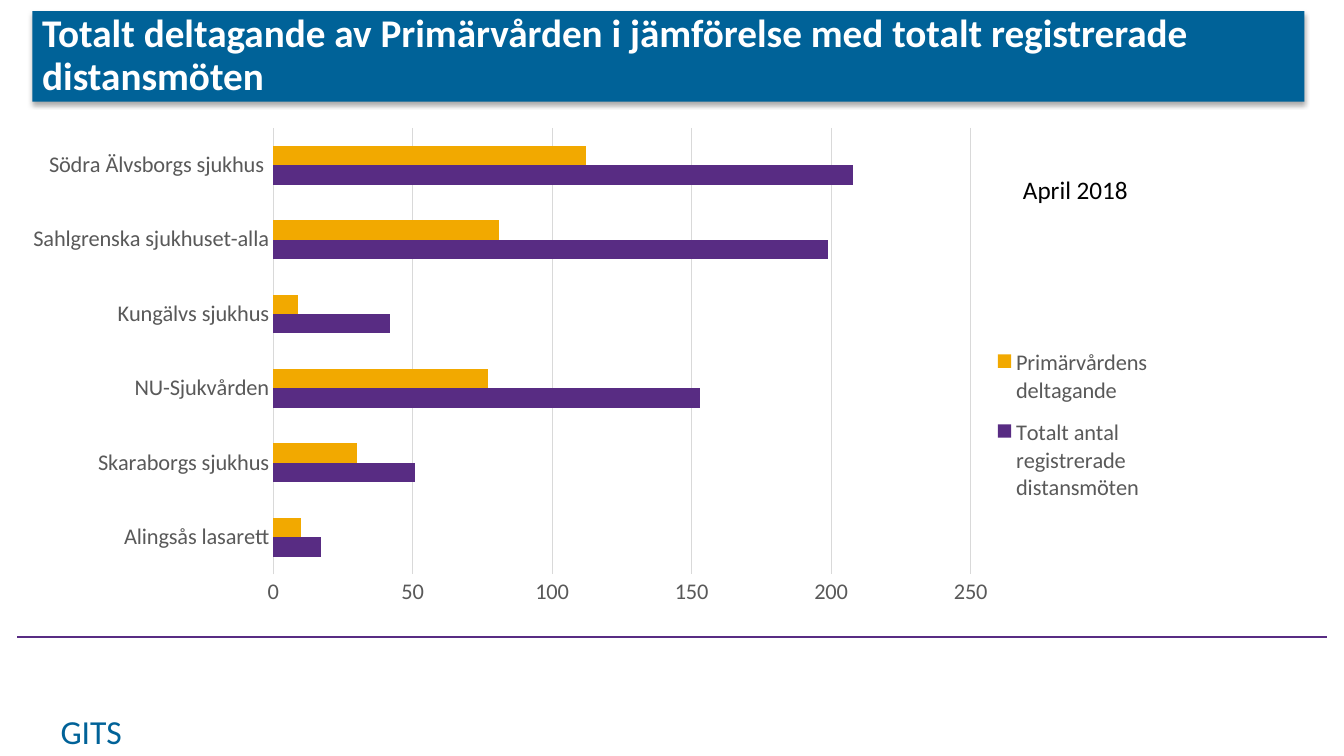
"""Build the slide comparing primary care participation with all registered remote meetings."""

from dataclasses import dataclass

import lxml.etree
import pptx
import pptx.chart.axis
import pptx.chart.chart
import pptx.chart.data
import pptx.dml.color
import pptx.enum.chart
import pptx.enum.shapes
import pptx.enum.text
import pptx.oxml
import pptx.oxml.ns
import pptx.slide
import pptx.text.text
import pptx.util

Inches = pptx.util.Inches
qn = pptx.oxml.ns.qn


@dataclass(frozen=True)
class Theme:
    font: str = "Calibri"
    blue: str = "006298"
    purple: str = "582C83"
    yellow: str = "F2A900"
    white: str = "FFFFFF"
    black: str = "000000"
    gray: str = "595959"
    grid: str = "D9D9D9"
    title_size: int = 28
    footer_size: int = 24
    note_size: int = 18
    chart_size: int = 16


@dataclass(frozen=True)
class Box:
    left: float
    top: float
    width: float
    height: float

    def lengths(self) -> tuple[int, int, int, int]:
        return (Inches(self.left), Inches(self.top), Inches(self.width), Inches(self.height))


@dataclass(frozen=True)
class Label:
    text: str
    box: Box
    size: int
    color: str
    alignment: pptx.enum.text.PP_ALIGN
    wrap: bool


@dataclass(frozen=True)
class Series:
    name: str
    values: tuple[int, ...]
    color: str


THEME = Theme()
TITLE = "Totalt deltagande av Primärvården i jämförelse med totalt registrerade distansmöten"
CHART_BOX = Box(0.22, 1.12, 11.57, 4.98)
PLOT_BOX = Box(2.49, 0.15, 6.92, 4.43)
LEGEND_BOX = Box(9.55, 2.2, 1.74, 1.81)
LABELS = (
    Label("GITS", Box(0.47, 7, 0.87, 0.5), THEME.footer_size, THEME.blue,
          pptx.enum.text.PP_ALIGN.CENTER, True),
    Label("April 2018", Box(10.05, 1.68, 1.25, 0.4), THEME.note_size, THEME.black,
          pptx.enum.text.PP_ALIGN.LEFT, False),
)
HOSPITALS = (
    "Alingsås lasarett",
    "Skaraborgs sjukhus",
    "NU-Sjukvården",
    "Kungälvs sjukhus",
    "Sahlgrenska sjukhuset-alla",
    "Södra Älvsborgs sjukhus ",
)
MEETINGS = (
    Series("Totalt antal registrerade distansmöten", (17, 51, 153, 42, 199, 208), THEME.purple),
    Series("Primärvårdens deltagande", (10, 30, 77, 9, 81, 112), THEME.yellow),
)


def rgb(color: str) -> pptx.dml.color.RGBColor:
    return pptx.dml.color.RGBColor.from_string(color)


def set_font(font: pptx.text.text.Font, size: int, color: str, bold: bool = False) -> None:
    font.name = THEME.font
    font.size = pptx.util.Pt(size)
    font.bold = bold
    font.color.rgb = rgb(color)


def add_title(slide: pptx.slide.Slide) -> None:
    shape = slide.shapes.add_shape(
        pptx.enum.shapes.MSO_SHAPE.RECTANGLE, *Box(0.32, 0.11, 12.62, 0.9).lengths())
    shape.fill.solid()
    shape.fill.fore_color.rgb = rgb(THEME.blue)
    shape.line.fill.background()
    shape.shadow.inherit = False
    effects = shape.element.spPr.find(qn("a:effectLst"))
    shadow = lxml.etree.SubElement(
        effects, qn("a:outerShdw"), blurRad=str(pptx.util.Pt(3.5)), dist=str(pptx.util.Pt(2.2)),
        dir="5400000", algn="t", rotWithShape="0")
    color = lxml.etree.SubElement(shadow, qn("a:srgbClr"), val=THEME.black)
    lxml.etree.SubElement(color, qn("a:alpha"), val="32000")
    frame = shape.text_frame
    frame.word_wrap = True
    frame.vertical_anchor = pptx.enum.text.MSO_ANCHOR.MIDDLE
    paragraph = frame.paragraphs[0]
    paragraph.text = TITLE
    paragraph.alignment = pptx.enum.text.PP_ALIGN.LEFT
    paragraph.line_spacing = 0.9
    set_font(paragraph.font, THEME.title_size, THEME.white, bold=True)


def add_label(slide: pptx.slide.Slide, label: Label) -> None:
    frame = slide.shapes.add_textbox(*label.box.lengths()).text_frame
    frame.word_wrap = label.wrap
    frame.auto_size = pptx.enum.text.MSO_AUTO_SIZE.SHAPE_TO_FIT_TEXT
    paragraph = frame.paragraphs[0]
    paragraph.text = label.text
    paragraph.alignment = label.alignment
    set_font(paragraph.font, label.size, label.color)


def add_footer_line(slide: pptx.slide.Slide) -> None:
    line = slide.shapes.add_connector(
        pptx.enum.shapes.MSO_CONNECTOR.STRAIGHT,
        Inches(0.17), Inches(6.32), Inches(13.17), Inches(6.32))
    line.line.color.rgb = rgb(THEME.purple)
    line.line.width = pptx.util.Pt(1)
    lxml.etree.SubElement(line.element.spPr, qn("a:effectLst"))


def set_layout(parent: lxml.etree.ElementBase, index: int, box: Box, inner: bool) -> None:
    for existing in parent.findall(qn("c:layout")):
        parent.remove(existing)
    layout = pptx.oxml.parse_xml(f"<c:layout {pptx.oxml.ns.nsdecls('c')}/>")
    manual = lxml.etree.SubElement(layout, qn("c:manualLayout"))
    settings = {"layoutTarget": "inner"} if inner else {}
    settings |= {"xMode": "edge", "yMode": "edge",
                 "x": box.left / CHART_BOX.width, "y": box.top / CHART_BOX.height,
                 "w": box.width / CHART_BOX.width, "h": box.height / CHART_BOX.height}
    for name, value in settings.items():
        lxml.etree.SubElement(manual, qn(f"c:{name}"), val=str(value))
    parent.insert(index, layout)


def style_axis(axis: pptx.chart.axis._BaseAxis) -> None:
    axis.major_tick_mark = pptx.enum.chart.XL_TICK_MARK.NONE
    axis.minor_tick_mark = pptx.enum.chart.XL_TICK_MARK.NONE
    set_font(axis.tick_labels.font, THEME.chart_size, THEME.gray)


def style_chart(chart: pptx.chart.chart.Chart) -> None:
    chart.has_title = False
    set_font(chart.font, THEME.chart_size, THEME.black)
    style_axis(chart.category_axis)
    style_axis(chart.value_axis)
    chart.value_axis.minimum_scale = 0
    chart.value_axis.maximum_scale = 250
    chart.value_axis.major_unit = 50
    chart.value_axis.format.line.fill.background()
    for line in (chart.category_axis.format.line, chart.value_axis.major_gridlines.format.line):
        line.color.rgb = rgb(THEME.grid)
        line.width = pptx.util.Pt(0.75)
    chart.has_legend = True
    chart.legend.position = pptx.enum.chart.XL_LEGEND_POSITION.RIGHT
    chart.legend.include_in_layout = False
    set_font(chart.legend.font, THEME.chart_size, THEME.gray)
    plot = chart.plots[0]
    plot.gap_width = 182
    plot.overlap = 0
    plot.vary_by_categories = False
    for series, meeting in zip(plot.series, MEETINGS):
        series.format.fill.solid()
        series.format.fill.fore_color.rgb = rgb(meeting.color)
    chart_space = chart.element
    set_layout(chart_space.find(f".//{qn('c:plotArea')}"), 0, PLOT_BOX, True)
    set_layout(chart_space.find(f".//{qn('c:legend')}"), 1, LEGEND_BOX, False)


def add_meeting_chart(slide: pptx.slide.Slide) -> None:
    data = pptx.chart.data.CategoryChartData()
    data.categories = HOSPITALS
    for series in MEETINGS:
        data.add_series(series.name, series.values)
    frame = slide.shapes.add_chart(
        pptx.enum.chart.XL_CHART_TYPE.BAR_CLUSTERED, *CHART_BOX.lengths(), data)
    style_chart(frame.chart)


def main() -> None:
    presentation = pptx.Presentation()
    presentation.slide_width = Inches(40 / 3)
    presentation.slide_height = Inches(7.5)
    slide = presentation.slides.add_slide(presentation.slide_layouts[6])
    add_footer_line(slide)
    add_title(slide)
    add_meeting_chart(slide)
    for label in LABELS:
        add_label(slide, label)
    presentation.save("out.pptx")


if __name__ == "__main__":
    main()
